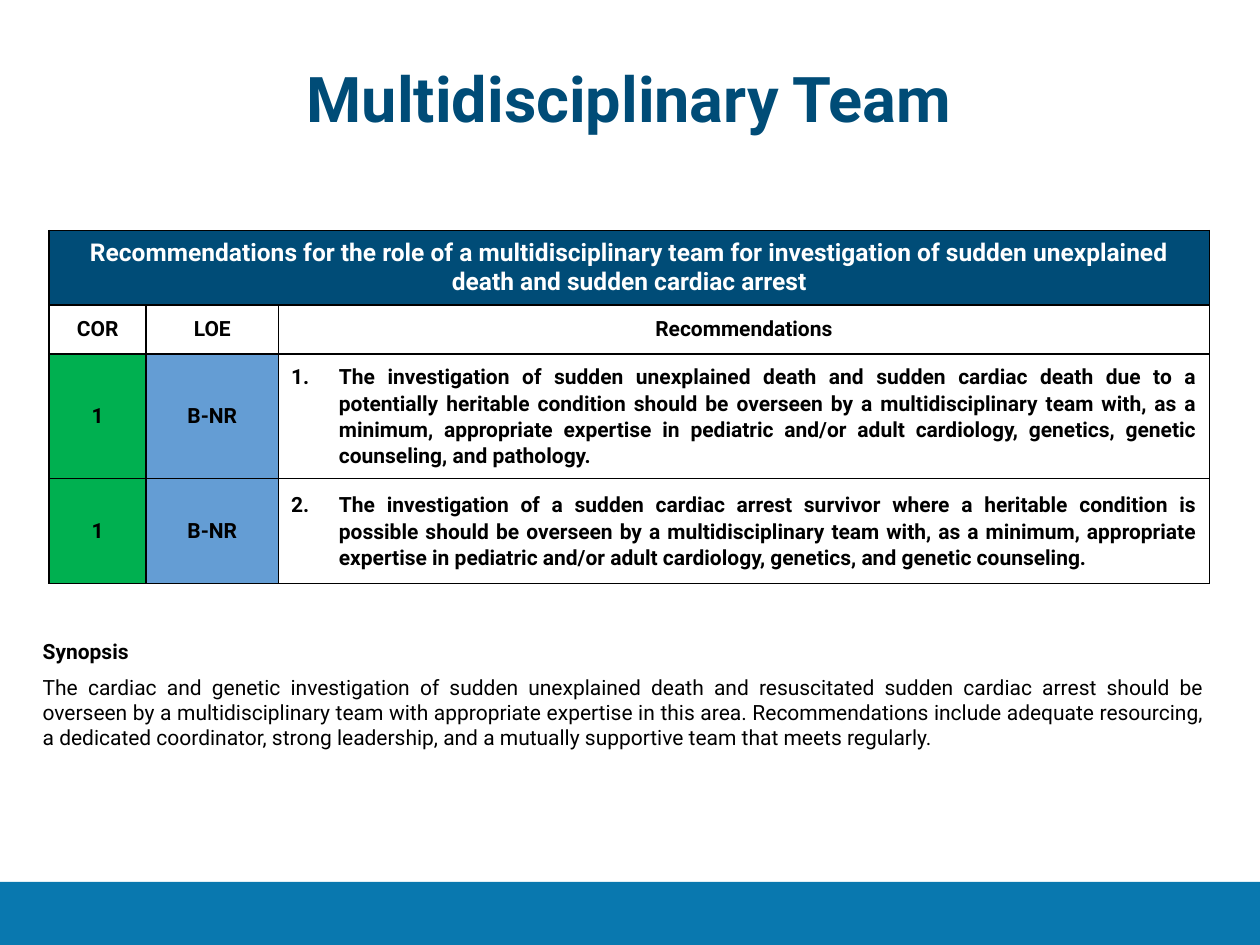
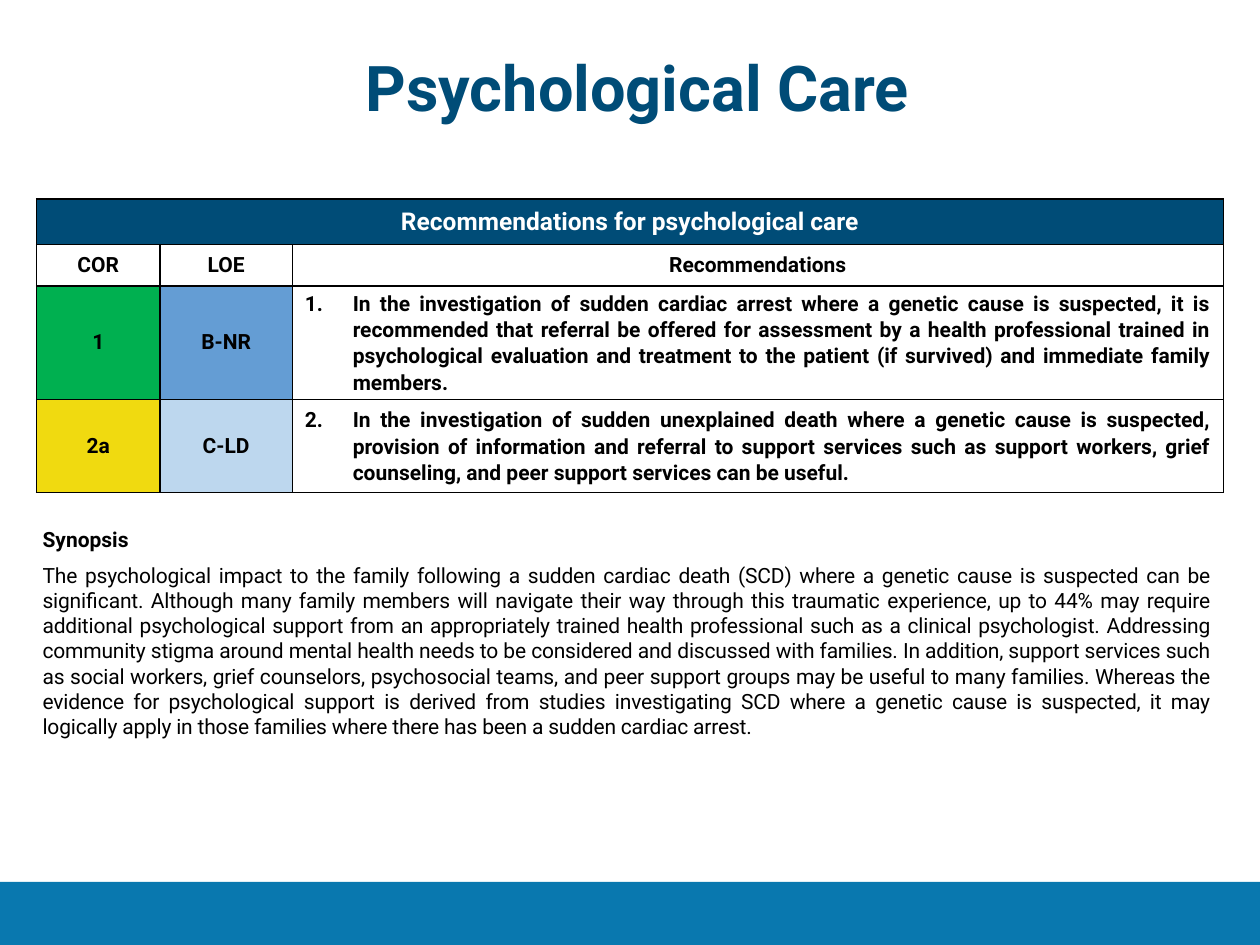
import pptx
import pptx.util
import pptx.dml.color
import pptx.enum.shapes
import pptx.enum.text
import pptx.oxml
import pptx.oxml.ns

Inches = pptx.util.Inches
ALIGN = pptx.enum.text.PP_ALIGN
MID = pptx.enum.text.MSO_ANCHOR.MIDDLE

FONT = "Roboto"
NAVY, BAND, BLACK, WHITE = "004C77", "0978AF", "000000", "FFFFFF"
TINTS = {"1": "00B050", "2a": "F0DA10", "B-NR": "649DD4", "C-LD": "BDD7EE"}
HEADS = ("COR", "LOE", "Recommendations")

PAGES = [
    {
        "title": "Multidisciplinary Team",
        "head": "Recommendations for the role of a multidisciplinary team for investigation "
                "of sudden unexplained death and sudden cardiac arrest",
        "recs": [
            ("1", "B-NR",
             "The investigation of sudden unexplained death and sudden cardiac death due to a "
             "potentially heritable condition should be overseen by a multidisciplinary team "
             "with, as a minimum, appropriate expertise in pediatric and/or adult cardiology, "
             "genetics, genetic counseling, and pathology."),
            ("1", "B-NR",
             "The investigation of a sudden cardiac arrest survivor where a heritable condition "
             "is possible should be overseen by a multidisciplinary team with, as a minimum, "
             "appropriate expertise in pediatric and/or adult cardiology, genetics, and genetic "
             "counseling."),
        ],
        "notes": [
            "The cardiac and genetic investigation of sudden unexplained death and "
            "resuscitated sudden cardiac arrest should be overseen by a multidisciplinary "
            "team with appropriate expertise in this area.",
            "Recommendations include adequate resourcing, a dedicated coordinator, strong "
            "leadership, and a mutually supportive team that meets regularly.",
        ],
        "track": 0,
        "top": (1.16, 0.42, 7.67, 0.71),
        "grid": (0.39, 1.83),
        "cols": (0.77, 1.05, 7.39),
        "rows": (0.59, 0.39, 0.99, 0.83),
        "foot": (0.24, 5.02, 9.42, 0.99),
    },
    {
        "title": "Psychological Care",
        "head": "Recommendations for psychological care",
        "recs": [
            ("1", "B-NR",
             "In the investigation of sudden cardiac arrest where a genetic cause is suspected, "
             "it is recommended that referral be offered for assessment by a health professional "
             "trained in psychological evaluation and treatment to the patient (if survived) and "
             "immediate family members."),
            ("2a", "C-LD",
             "In the investigation of sudden unexplained death where a genetic cause is "
             "suspected, provision of information and referral to support services such as "
             "support workers, grief counseling, and peer support services can be useful."),
        ],
        "notes": [
            "The psychological impact to the family following a sudden cardiac death (SCD) "
            "where a genetic cause is suspected can be significant.",
            "Although many family members will navigate their way through this traumatic "
            "experience, up to 44% may require additional psychological support from an "
            "appropriately trained health professional such as a clinical psychologist.",
            "Addressing community stigma around mental health needs to be considered and "
            "discussed with families.",
            "In addition, support services such as social workers, grief counselors, "
            "psychosocial teams, and peer support groups may be useful to many families.",
            "Whereas the evidence for psychological support is derived from studies "
            "investigating SCD where a genetic cause is suspected, it may logically apply in "
            "those families where there has been a sudden cardiac arrest.",
        ],
        "track": -10,
        "top": (0.29, 0.33, 9.54, 0.71),
        "grid": (0.29, 1.58),
        "cols": (0.98, 1.05, 7.39),
        "rows": (0.36, 0.33, 0.9, 0.74),
        "foot": (0.24, 4.13, 9.47, 1.8),
    },
]


def paint(fill, tint):
    fill.solid()
    fill.fore_color.rgb = pptx.dml.color.RGBColor.from_string(tint)


def child(node, tag, **attrs):
    item = pptx.oxml.parse_xml(f"<a:{tag} {pptx.oxml.ns.nsdecls('a')}/>")
    for name, value in attrs.items():
        item.set(name, str(value))
    node.append(item)
    return item


def write(para, text, size=12, tint=BLACK, bold=True, align=ALIGN.CENTER,
          after=0, line=None, number=None, track=0):
    para.alignment = align
    para.space_before = pptx.util.Pt(0)
    para.space_after = pptx.util.Pt(after)
    if line:
        para.line_spacing = line
    if number:
        props = para._p.get_or_add_pPr()
        props.set("marL", str(Inches(0.38)))
        props.set("indent", str(-Inches(0.38)))
        child(props, "buFont", typeface="+mj-lt")
        child(props, "buAutoNum", type="arabicPeriod", startAt=number)
    run = para.add_run()
    run.text = text
    run.font.name = FONT
    run.font.size = pptx.util.Pt(size)
    run.font.bold = bold
    paint(run.font.fill, tint)
    if track:
        run._r.get_or_add_rPr().set("spc", str(track))


def place(shape, box):
    shape.left, shape.top, shape.width, shape.height = map(Inches, box)


def style(cell, tint, side=0.1, edge=0):
    props = cell._tc.get_or_add_tcPr()
    for tag in ("lnL", "lnR", "lnT", "lnB"):
        border = child(props, tag, w=pptx.util.Pt(1))
        child(child(border, "solidFill"), "srgbClr", val=BLACK)
    paint(cell.fill, tint)
    cell.vertical_anchor = MID
    cell.margin_left = cell.margin_right = Inches(side)
    cell.margin_top = cell.margin_bottom = Inches(edge)


def add_grid(slide, page):
    cols, rows = page["cols"], page["rows"]
    box = (*page["grid"], sum(cols), sum(rows))
    table = slide.shapes.add_table(len(rows), len(cols), *map(Inches, box)).table
    table.first_row = table.horz_banding = False
    for col, width in zip(table.columns, cols):
        col.width = Inches(width)
    for row, height in zip(table.rows, rows):
        row.height = Inches(height)

    for cell in table.rows[0].cells:
        style(cell, NAVY, side=0.11, edge=0.05)
    head = table.cell(0, 0)
    head.merge(table.cell(0, len(cols) - 1))
    write(head.text_frame.paragraphs[0], page["head"], size=14, tint=WHITE)

    for r, texts in enumerate([HEADS] + page["recs"]):
        for c, text in enumerate(texts):
            cell = table.cell(r + 1, c)
            style(cell, TINTS.get(text, WHITE))
            form = {}
            if r and c == 2:
                form = {"align": ALIGN.JUSTIFY, "line": 1.07, "number": r}
            write(cell.text_frame.paragraphs[0], text, **form)


def add_page(deck, page):
    slide = deck.slides.add_slide(deck.slide_layouts[5])
    band = slide.shapes.add_shape(pptx.enum.shapes.MSO_SHAPE.RECTANGLE,
                                  0, Inches(7), Inches(10), Inches(0.5))
    band.shadow.inherit = False
    paint(band.fill, BAND)
    band.line.fill.background()

    title = slide.shapes.title
    place(title, page["top"])
    title.text_frame.auto_size = pptx.enum.text.MSO_AUTO_SIZE.NONE
    title.text_frame.vertical_anchor = MID
    write(title.text_frame.paragraphs[0], page["title"], size=36, tint=NAVY)

    add_grid(slide, page)

    frame = slide.shapes.add_textbox(*map(Inches, page["foot"])).text_frame
    frame.word_wrap = True
    write(frame.paragraphs[0], "Synopsis", align=ALIGN.JUSTIFY, after=6)
    write(frame.add_paragraph(), " ".join(page["notes"]), bold=False,
          align=ALIGN.JUSTIFY, track=page["track"])


def main():
    deck = pptx.Presentation()
    deck.slide_width, deck.slide_height = Inches(10), Inches(7.5)
    for page in PAGES:
        add_page(deck, page)
    deck.save("out.pptx")


if __name__ == "__main__":
    main()
